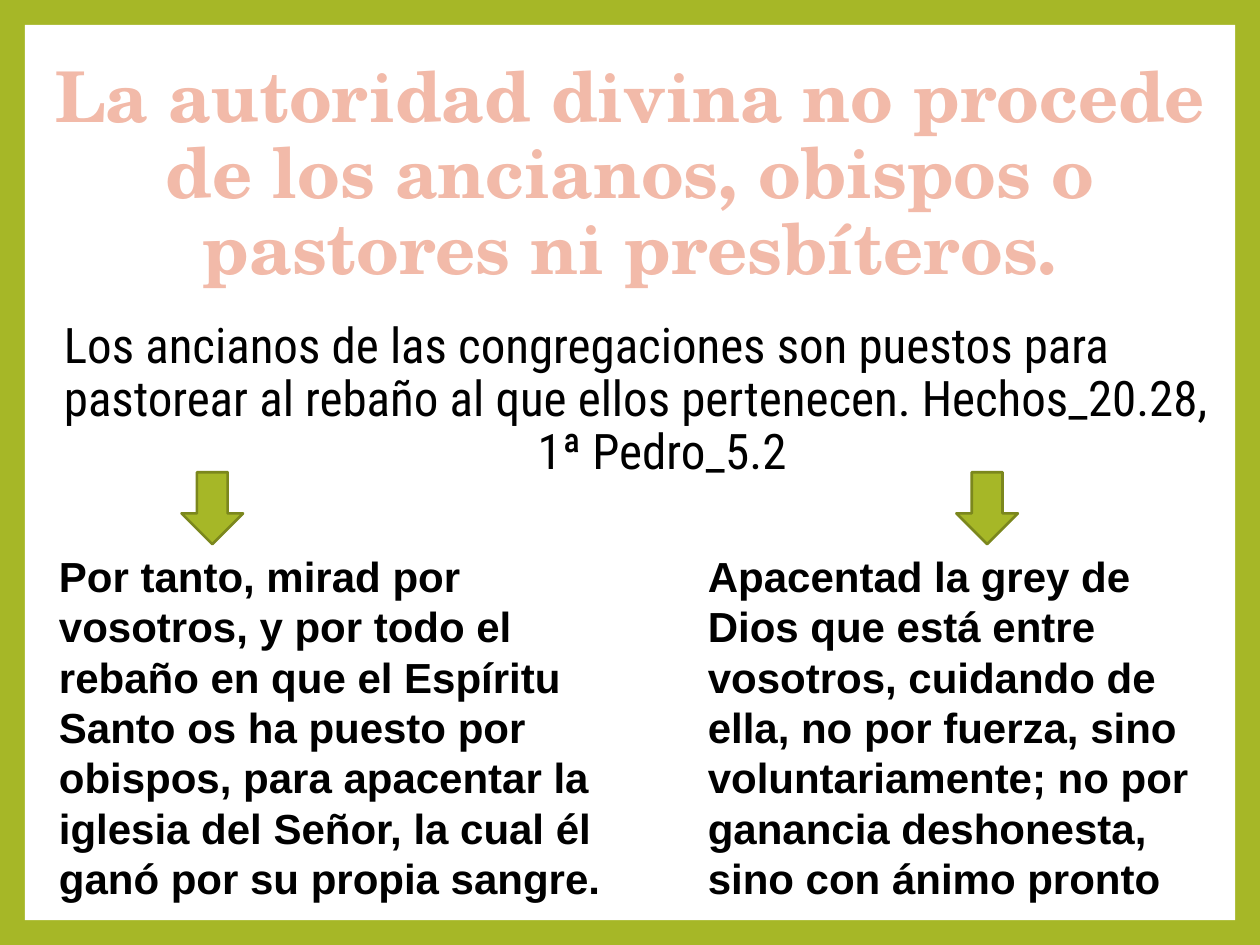
from lxml import etree
from pptx import Presentation
from pptx.dml.color import RGBColor
from pptx.enum import shapes, text
from pptx.oxml.ns import qn
from pptx.util import Cm, Pt

GREEN = RGBColor(0xA6, 0xB7, 0x27)
OLIVE = RGBColor(0x7B, 0x87, 0x1D)
PEACH = RGBColor(0xF2, 0xBA, 0xA9)
WHITE = RGBColor(0xFF, 0xFF, 0xFF)
BLACK = RGBColor(0, 0, 0)
RUST = "DF5327"

deck = Presentation()
deck.slide_width, deck.slide_height = Cm(25.4), Cm(19.05)
slide = deck.slides.add_slide(deck.slide_layouts[6])
slide.background.fill.solid()
slide.background.fill.fore_color.rgb = GREEN


def write(lines, box, size, font, color=BLACK, bold=False, space=1.0,
          align=text.PP_ALIGN.LEFT, anchor=text.MSO_ANCHOR.TOP):
    frame = slide.shapes.add_textbox(*map(Cm, box)).text_frame
    frame.word_wrap = True
    frame.vertical_anchor = anchor
    frame.text = lines
    for para in frame.paragraphs:
        para.alignment = align
        para.line_spacing = space
        run = para.runs[0].font
        run.size, run.name, run.bold = Pt(size), font, bold
        run.color.rgb = color
    return frame.paragraphs


panel = slide.shapes.add_shape(
    shapes.MSO_SHAPE.RECTANGLE, Cm(0.5), Cm(0.5), Cm(24.4), Cm(18.05))
panel.shadow.inherit = False
panel.fill.solid()
panel.fill.fore_color.rgb = WHITE
panel.line.fill.background()

title = write(
    "La autoridad divina no procede de los ancianos, obispos o pastores ni presbíteros.",
    (0.69, 0.74, 24.03, 5.61), 40, "TeX Gyre Schola", color=PEACH, bold=True,
    space=0.9, align=text.PP_ALIGN.CENTER, anchor=text.MSO_ANCHOR.MIDDLE)
props = title[0].runs[0]._r.get_or_add_rPr()
edge = etree.Element(qn("a:ln"), w=str(Pt(1.75)))
fill = etree.SubElement(edge, qn("a:solidFill"))
etree.SubElement(fill, qn("a:srgbClr"), val=RUST)
props.insert(0, edge)

body = write(
    "Los ancianos de las congregaciones son puestos para pastorear al rebaño "
    "al que ellos pertenecen. Hechos_20.28,\n1ª Pedro_5.2",
    (0.94, 6.35, 23.8, 4.34), 28, "Roboto Condensed", space=0.9)
for para, left in zip(body, (0.1, 9.65)):
    para._p.get_or_add_pPr().set("marL", str(Cm(left)))

verses = [
    (0.94, 11.48, 3.66,
     "Por tanto, mirad por vosotros, y por todo el rebaño en que el Espíritu "
     "Santo os ha puesto por obispos, para apacentar la iglesia del Señor, "
     "la cual él ganó por su propia sangre."),
    (14.02, 11.02, 19.28,
     "Apacentad la grey de Dios que está entre vosotros, cuidando de ella, "
     "no por fuerza, sino voluntariamente; no por ganancia deshonesta, "
     "sino con ánimo pronto"),
]
for left, width, tip, verse in verses:
    write(verse, (left, 10.97, width, 7.44), 24, "Arial", bold=True)
    arrow = slide.shapes.add_shape(
        shapes.MSO_SHAPE.DOWN_ARROW, Cm(tip), Cm(9.52), Cm(1.24), Cm(1.45))
    arrow.shadow.inherit = False
    arrow.fill.solid()
    arrow.fill.fore_color.rgb = GREEN
    arrow.line.color.rgb = OLIVE
    arrow.line.width = Pt(1.5)

deck.save("out.pptx")
